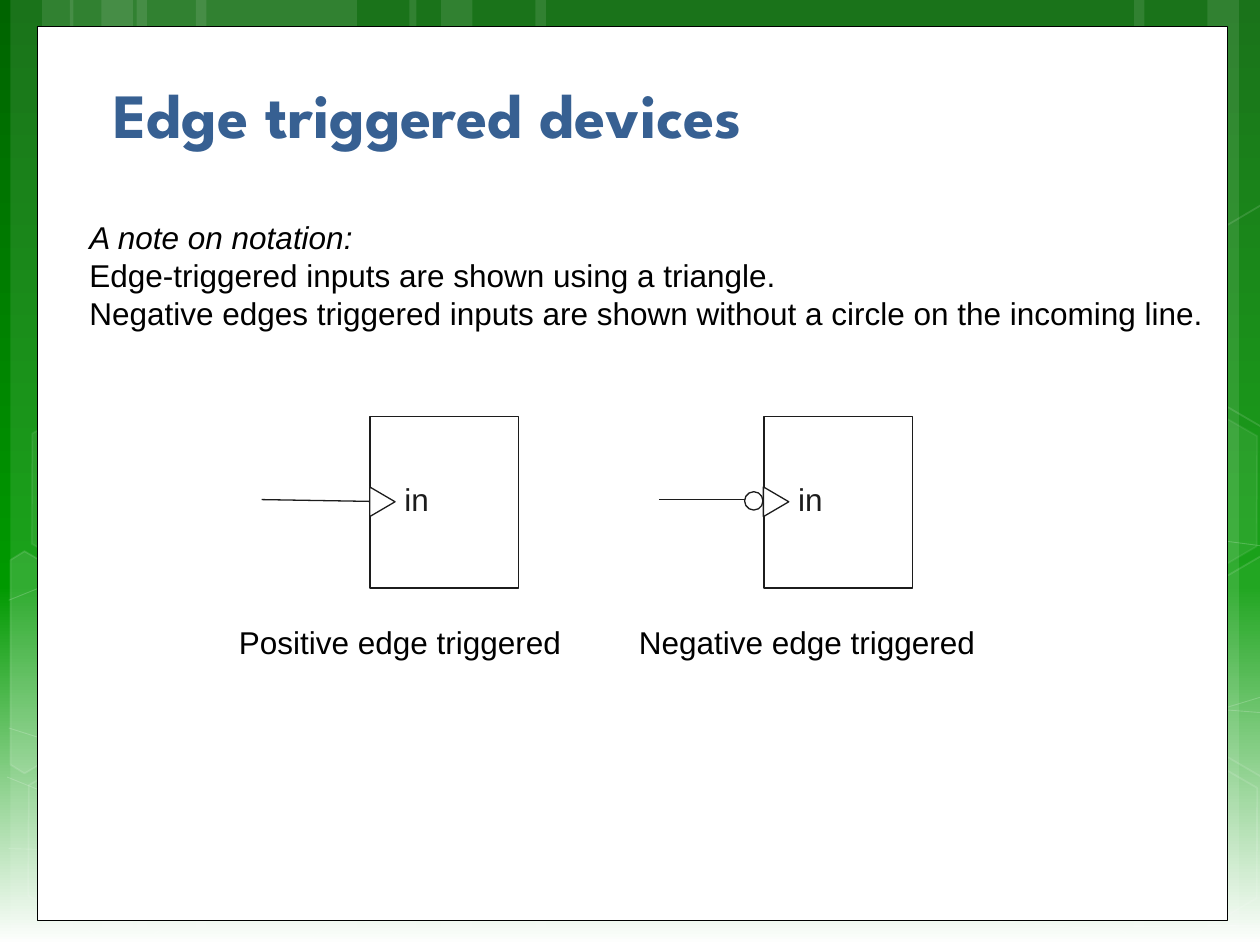
from copy import deepcopy
from dataclasses import dataclass

from lxml import etree
from pptx import Presentation
from pptx.dml.color import RGBColor
from pptx.enum import shapes, text
from pptx.oxml.ns import qn
from pptx.util import Pt


@dataclass(frozen=True)
class Theme:
    font: str = "Arial"
    title_font: str = "League Spartan"
    title_size: int = 36
    body_size: int = 18
    title: str = "376092"
    body: str = "000000"
    ink: str = "1C1C1C"
    white: str = "FFFFFF"
    hairline: float = 0.5
    thin: float = 0.75
    gradient: tuple = ((0, "006400"), (0.62, "009900"), (1, "FFFFFF"))


T = Theme()
S = shapes.MSO_SHAPE
WIDTH, HEIGHT = 720, 540

# left, width of the vertical bands
BANDS = [(78, 126), (6, 36), (24, 60), (112, 126), (40, 36), (58, 60), (528, 126),
         (690, 36), (648, 60), (306, 222), (234, 36), (252, 60)]
# left, top, fill opacity, line opacity of the hexagons
HEXAGONS = [(8, 425.5, 0, 12), (10, 224.5, 7, 8), (600.5, 427, 0, 12), (600.5, 226, 7, 8)]
# fill opacity and corners of the hexagons cut by the slide edge
CUT_HEXAGONS = [
    (10, [(6, 320), (14, 315), (69, 347), (68, 410), (14, 442), (6, 437)]),
    (4, [(667, 349), (721, 317.5), (726, 321), (726, 441), (721, 444), (667, 412.5)]),
    (0, [(667, 149), (721, 117), (727, 121), (726, 241), (721, 244), (667, 212.5)]),
]
CURVES = [
    [(5, 485), (137, 488), (330, 479), (570, 444), (725, 397)],
    [(5, 343), (87, 310), (250, 279), (471, 279), (725, 312.5)],
    [(4, 444), (240, 539)],
    [(5, 416), (92, 443.5), (257, 484.5), (452, 517), (614, 530), (725, 528.5)],
    [(174, 539), (279, 460), (438, 416), (572, 404.5), (686, 404.5), (724, 407.5)],
]


def set_alpha(part, percent):
    """Make the colour inside a fill or line element partly transparent."""
    color = next(part.iter(qn("a:srgbClr")))
    etree.SubElement(color, qn("a:alpha")).set("val", str(percent * 1000))


def paint(sp, fill=None, fill_alpha=100, line=None, width=1, line_alpha=100):
    sp.shadow.inherit = False
    if fill and fill_alpha:
        sp.fill.solid()
        sp.fill.fore_color.rgb = RGBColor.from_string(fill)
        if fill_alpha < 100:
            set_alpha(sp._element.spPr.find(qn("a:solidFill")), fill_alpha)
    else:
        sp.fill.background()
    if line:
        sp.line.color.rgb = RGBColor.from_string(line)
        sp.line.width = Pt(width)
        if line_alpha < 100:
            set_alpha(sp._element.spPr.find(qn("a:ln")), line_alpha)
    else:
        sp.line.fill.background()


def add_shape(s, kind, x, y, w, h, **look):
    sp = s.shapes.add_shape(kind, Pt(x), Pt(y), Pt(w), Pt(h))
    paint(sp, **look)
    return sp


def add_outline(s, points, close, **look):
    pen = s.shapes.build_freeform(Pt(points[0][0]), Pt(points[0][1]))
    pen.add_line_segments([(Pt(x), Pt(y)) for x, y in points[1:]], close=close)
    paint(pen.convert_to_shape(), **look)


def add_line(s, x1, y1, x2, y2):
    cx = s.shapes.add_connector(shapes.MSO_CONNECTOR.STRAIGHT, Pt(x1), Pt(y1), Pt(x2), Pt(y2))
    cx.line.color.rgb = RGBColor.from_string(T.ink)
    cx.line.width = Pt(T.thin)
    etree.SubElement(cx._element.spPr, qn("a:effectLst"))


def write(p, words, color, **formats):
    r = p.add_run()
    r.text = words
    for name, value in formats.items():
        setattr(r.font, name, value)
    r.font.color.rgb = RGBColor.from_string(color)


def add_text(s, x, y, w, h, lines, color=T.body, wrap=False):
    """Place a text box; lines holds pairs of wording and italic."""
    tf = s.shapes.add_textbox(Pt(x), Pt(y), Pt(w), Pt(h)).text_frame
    tf.word_wrap = wrap
    tf.auto_size = text.MSO_AUTO_SIZE.SHAPE_TO_FIT_TEXT
    for i, (words, italic) in enumerate(lines):
        p = tf.add_paragraph() if i else tf.paragraphs[0]
        write(p, words, color, name=T.font, size=Pt(T.body_size), italic=italic)


def draw_background(s):
    fill = s.background.fill
    fill.gradient()
    fill.gradient_angle = 270
    stop_list = s._element.xpath(".//a:gsLst")[0]
    stop_list.insert(1, deepcopy(stop_list[0]))
    for stop, (position, color) in zip(fill.gradient_stops, T.gradient):
        stop.position = position
        stop.color.rgb = RGBColor.from_string(color)


def draw_decor(s):
    for x, w in BANDS:
        add_shape(s, S.RECTANGLE, x, 0, w, HEIGHT, fill=T.white, fill_alpha=10)
    for points in CURVES:
        add_outline(s, points, False, line=T.white, width=T.hairline, line_alpha=20)
    for x, y, fill_alpha, line_alpha in HEXAGONS:
        sp = add_shape(s, S.HEXAGON, x, y, 126, 109.5, fill=T.white, fill_alpha=fill_alpha,
                       line=T.white, line_alpha=line_alpha)
        sp.adjustments[0] = 0.285
        sp.rotation = 30
    for fill_alpha, points in CUT_HEXAGONS:
        add_outline(s, points, True, fill=T.white, fill_alpha=fill_alpha,
                    line=T.white, line_alpha=12)


def draw_panel(s, x, y, w, h):
    add_shape(s, S.RECTANGLE, x, y, w, h, fill=T.white, line=T.body, width=T.hairline)


def place_title(s, x, y, w, h, words):
    sp = s.shapes.title
    s.shapes._spTree.append(sp._element)  # in front of the panel
    for name, value in dict(left=x, top=y, width=w, height=h).items():
        setattr(sp, name, Pt(value))
    tf = sp.text_frame
    tf.vertical_anchor = text.MSO_ANCHOR.BOTTOM
    p = tf.paragraphs[0]
    p.alignment = text.PP_ALIGN.LEFT
    write(p, words, T.title, name=T.title_font, size=Pt(T.title_size), bold=True)


def draw_device(s, x, y, caption, caption_dx, caption_w, lead_dx, negative=False):
    """Draw a device whose body has its top left corner at x, y."""
    w, h = 85, 98
    outline = dict(line=T.ink, width=T.thin)
    add_line(s, x + lead_dx, y + 47.5, x - (4.5 if negative else 0.5), y + (47.5 if negative else 48.5))
    add_shape(s, S.RECTANGLE, x, y, w, h, **outline)
    add_text(s, x + 12.5, y + 33, 29, 29, [("in", False)], T.ink)
    if negative:
        add_shape(s, S.OVAL, x - 11, y + 43, 10.5, 10.5, fill=T.white, **outline)
    edge = add_shape(s, S.ISOSCELES_TRIANGLE, x - 1.5, y + 41.5, 17, 14.5, fill=T.white, **outline)
    edge.rotation = 90
    add_text(s, x + caption_dx, y + 114.5, caption_w, 29, [(caption, False)])


def main():
    prs = Presentation()
    prs.slide_width, prs.slide_height = Pt(WIDTH), Pt(HEIGHT)
    s = prs.slides.add_slide(prs.slide_layouts[5])
    draw_background(s)
    draw_decor(s)
    draw_panel(s, 21.5, 15, 680, 511)
    place_title(s, 57.5, 35.5, 606, 54.5, "Edge triggered devices")
    add_text(s, 44, 121, 657.5, 73, [
        ("A note on notation:", True),
        ("Edge-triggered inputs are shown using a triangle.", False),
        ("Negative edges triggered inputs are shown without a circle on the incoming line.", False),
    ], wrap=True)
    draw_device(s, 436.5, 238, "Negative edge triggered", -78.5, 213, -60, negative=True)
    draw_device(s, 211.5, 238, "Positive edge triggered", -82, 205, -62)
    prs.save("out.pptx")


if __name__ == "__main__":
    main()
